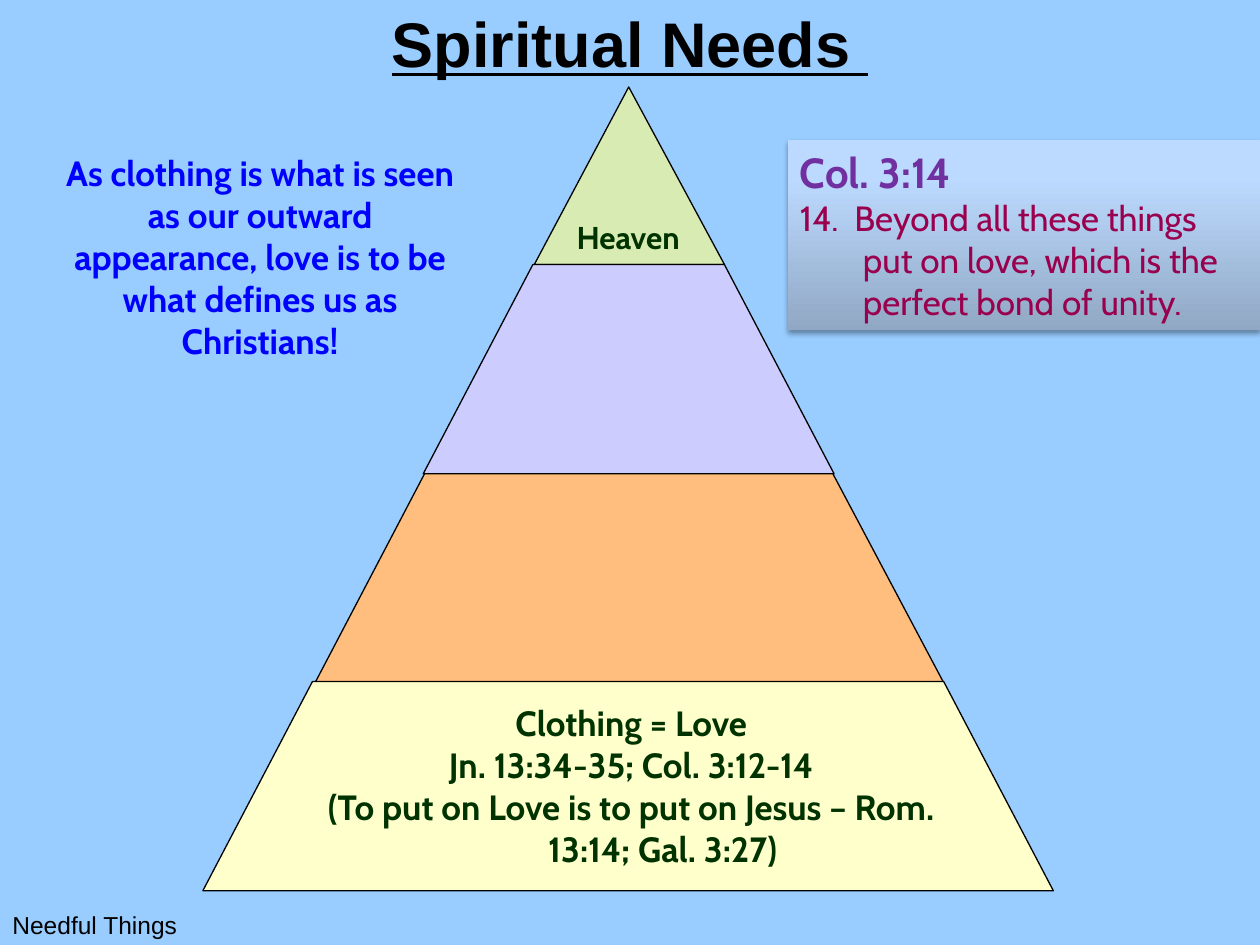
from lxml import etree
from pptx import Presentation
from pptx.dml.color import RGBColor
from pptx.enum.shapes import MSO_SHAPE
from pptx.enum.text import MSO_ANCHOR, PP_ALIGN
from pptx.oxml import parse_xml
from pptx.oxml.ns import qn
from pptx.util import Inches, Pt

CENTER, LEFT = PP_ALIGN.CENTER, PP_ALIGN.LEFT
TOP, MIDDLE = MSO_ANCHOR.TOP, MSO_ANCHOR.MIDDLE
NS = "http://schemas.openxmlformats.org/drawingml/2006/main"

COLORS = {
    "sky": "99CCFF", "black": "000000", "blue": "0000FF", "green": "003300",
    "purple": "7030A0", "crimson": "99004D",
    "lime": "D8EBB3", "lilac": "CCCCFF", "orange": "FFBE7D", "cream": "FFFFCC",
}
VERSE_GRADIENT = [(0, "91A8C4"), (80, "BCDAFF"), (100, "BEDBFF")]

TITLE = "Spiritual Needs "
FOOTER = "Needful Things"

# Tier: colour, top y, bottom y, top edge (left, right), bottom edge (left, right)
TIERS = [
    ("lime", 0.69, 2.1, (4.99, 4.99), (4.24, 5.75)),
    ("lilac", 2.1, 3.76, (4.23, 5.75), (3.36, 6.62)),
    ("orange", 3.76, 5.42, (3.37, 6.61), (2.5, 7.49)),
    ("cream", 5.41, 7.07, (2.48, 7.49), (1.61, 8.36)),
]

# Box (left, top, width, height), size, colour, lines
LABELS = [
    ((0, 1.15, 4.13, 1.77), 20, "blue", [
        "As clothing is what is seen", "as our outward",
        "appearance, love is to be", "what defines us as", "Christians!"]),
    ((4.33, 1.68, 1.31, 0.4), 18, "green", ["Heaven"]),
    ((2.3, 5.52, 5.42, 1.45), 20, "green", [
        "Clothing = Love", "Jn. 13:34-35; Col. 3:12-14",
        "(To put on Love is to put on Jesus – Rom. 13:14; Gal. 3:27)"]),
]

VERSE_BOX = (6.25, 1.11, 3.75, 1.51)
# Text, size, colour, bold
VERSE = [
    ("Col. 3:14", 24, "purple", True),
    ("14.  Beyond all these things put on love, which is the perfect bond of unity.",
     20, "crimson", False),
]


def rgb(name):
    return RGBColor.from_string(COLORS[name])


def inches(box):
    return [Inches(v) for v in box]


def style(p, font, size, color, bold=False, align=LEFT, hanging=False):
    p.alignment = align
    if hanging:
        pPr = p._p.get_or_add_pPr()
        pPr.set("marL", str(Inches(0.5)))
        pPr.set("indent", str(Inches(-0.5)))
    for r in p.runs:
        r.font.name, r.font.size, r.font.bold = font, Pt(size), bold
        r.font.color.rgb = rgb(color)


def fill_text(shape, lines, align):
    """Write (text, size, colour, bold) lines with a hanging indent."""
    tf = shape.text_frame
    tf.word_wrap = True
    tf.vertical_anchor = TOP
    tf.text = "\n".join(line[0] for line in lines)
    for p, (_, size, color, bold) in zip(tf.paragraphs, lines):
        style(p, "Cabin", size, color, bold, align, hanging=True)


def add_tier(s, color, top, bottom, top_edge, bottom_edge):
    points = [(top_edge[0], top), (top_edge[1], top),
              (bottom_edge[1], bottom), (bottom_edge[0], bottom)]
    points = list(dict.fromkeys(points))
    fb = s.shapes.build_freeform(*inches(points[0]), scale=1.0)
    fb.add_line_segments([inches(pt) for pt in points[1:]], close=True)
    sp = fb.convert_to_shape()
    sp.shadow.inherit = False
    sp.fill.solid()
    sp.fill.fore_color.rgb = rgb(color)
    sp.line.color.rgb = rgb("black")
    sp.line.width = Pt(0.75)


def add_verse(s):
    sp = s.shapes.add_shape(MSO_SHAPE.RECTANGLE, *inches(VERSE_BOX))
    stops = "".join(f'<a:gs pos="{pos * 1000}"><a:srgbClr val="{c}"/></a:gs>'
                    for pos, c in VERSE_GRADIENT)
    sp._element.spPr.append(parse_xml(
        f'<a:gradFill xmlns:a="{NS}" rotWithShape="1"><a:gsLst>{stops}</a:gsLst>'
        '<a:lin ang="16200000" scaled="0"/></a:gradFill>'))
    sp.line.fill.background()
    sp.shadow.inherit = False
    shadow = etree.SubElement(
        sp._element.spPr.find(qn("a:effectLst")), qn("a:outerShdw"),
        blurRad=str(Pt(3.1)), dist=str(Pt(1.8)), dir="5400000", rotWithShape="0")
    tint = etree.SubElement(shadow, qn("a:srgbClr"), val=COLORS["black"])
    etree.SubElement(tint, qn("a:alpha"), val="35000")
    fill_text(sp, VERSE, LEFT)


def main():
    prs = Presentation()
    prs.slide_width, prs.slide_height = Inches(10), Inches(7.5)
    s = prs.slides.add_slide(prs.slide_layouts[5])
    s.background.fill.solid()
    s.background.fill.fore_color.rgb = rgb("sky")

    title = s.shapes.title
    title.left, title.top, title.width, title.height = inches((0, 0, 10, 0.67))
    title.text_frame.text = TITLE
    title.text_frame.vertical_anchor = MIDDLE
    p = title.text_frame.paragraphs[0]
    style(p, "Arial", 36, "black", bold=True, align=CENTER)
    p.runs[0].font.underline = True

    footer = s.shapes.add_textbox(*inches((0, 7.17, 3.17, 0.33)))
    footer.text_frame.word_wrap = True
    footer.text_frame.text = FOOTER
    style(footer.text_frame.paragraphs[0], "Arial", 14, "black")

    for tier in TIERS:
        add_tier(s, *tier)
    for box, size, color, lines in LABELS:
        label = s.shapes.add_textbox(*inches(box))
        fill_text(label, [(line, size, color, True) for line in lines], CENTER)
    add_verse(s)
    prs.save("out.pptx")


if __name__ == "__main__":
    main()
